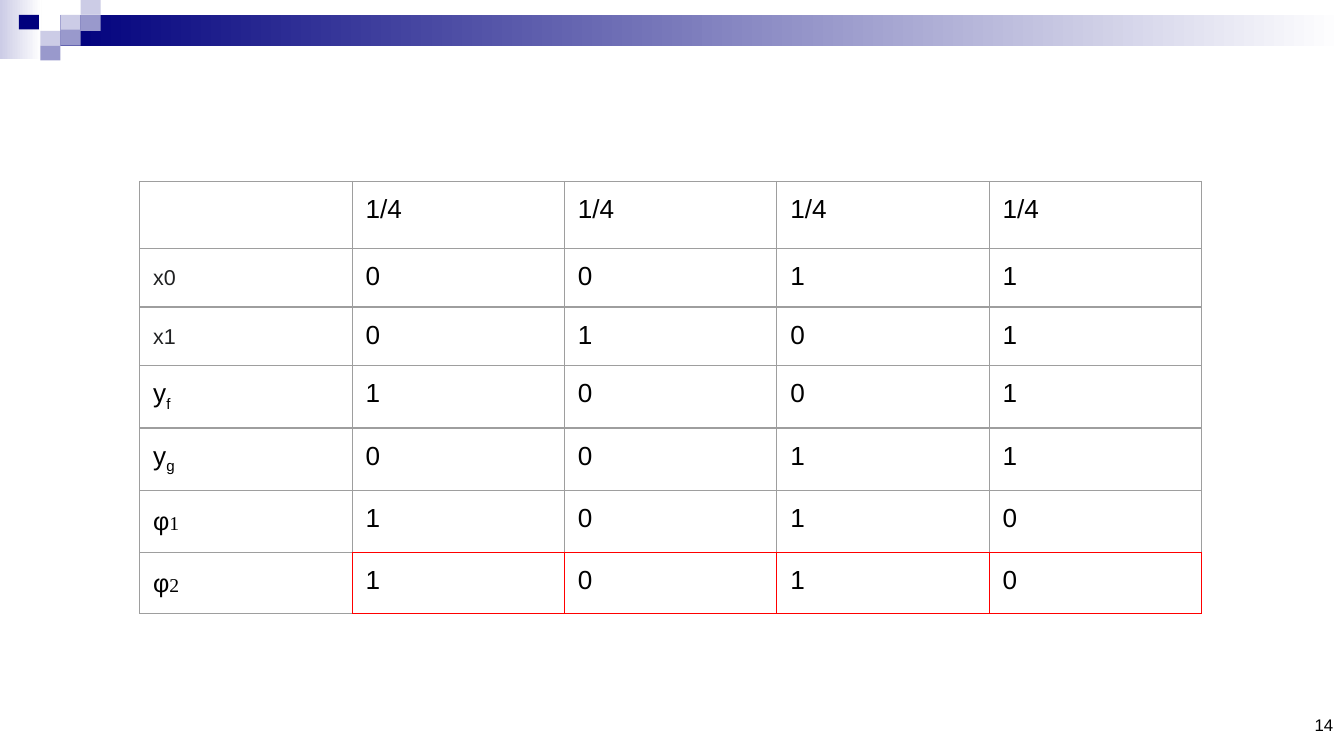
from lxml import etree
from pptx import Presentation
from pptx import util as u
from pptx.dml.color import RGBColor
from pptx.enum import shapes, text
from pptx.oxml.ns import qn

GREY, RED, BLACK = "9E9E9E", "FF0000", "000000"
NAVY, PALE, MID, WHITE = "00007D", "CCCCE6", "9999CC", "FFFFFF"


def rgb(value):
    """Return the colour for a hex string."""
    return RGBColor.from_string(value)


def add_run(p, txt, size=14, font="Arial", color=BLACK, base=0):
    """Add one formatted run, with an optional baseline shift in percent."""
    r = p.add_run()
    r.text = txt
    r.font.size = u.Pt(size)
    r.font.name = font
    r.font.color.rgb = rgb(color)
    if base:
        r.font._element.set("baseline", str(base * 1000))


def add_block(s, x, y, w, h, *colors):
    """Add a borderless rectangle in one colour or a left-to-right gradient."""
    sp = s.shapes.add_shape(shapes.MSO_SHAPE.RECTANGLE, *map(u.Inches, (x, y, w, h)))
    sp.shadow.inherit = False
    sp.line.fill.background()
    if len(colors) == 1:
        sp.fill.solid()
        sp.fill.fore_color.rgb = rgb(colors[0])
    else:
        sp.fill.gradient()
        sp.fill.gradient_angle = 0
        for stop, color in zip(sp.fill.gradient_stops, colors):
            stop.color.rgb = rgb(color)


def add_banner(s, x, y, w):
    """Draw the gradient band and its mosaic of small squares."""
    add_block(s, x, y, 0.31, 0.44, PALE, WHITE)
    add_block(s, x + 0.45, y + 0.11, w - 0.45, 0.23, NAVY, WHITE)
    squares = [(0.45, 0.11, 0.12, PALE), (0.6, 0, 0.11, PALE),
               (0.6, 0.11, 0.12, MID), (0.3, 0.23, 0.11, PALE),
               (0.14, 0.11, 0.11, NAVY), (0.45, 0.22, 0.12, MID),
               (0.3, 0.34, 0.11, MID)]
    for dx, dy, h, color in squares:
        add_block(s, x + dx, y + dy, 0.15, h, color)


def set_borders(cell, **sides):
    """Set the cell's edges, given as L, R, T and B hex colours."""
    tcPr = cell._tc.get_or_add_tcPr()
    for side in "LRTB":
        ln = etree.SubElement(tcPr, qn(f"a:ln{side}"), w=str(u.Pt(0.75)))
        fill = etree.SubElement(ln, qn("a:solidFill"))
        etree.SubElement(fill, qn("a:srgbClr"), val=sides[side])


def add_label(p, name):
    """Write a row label: input, subscripted output or Greek function."""
    head, tail = name[0], name[1:]
    if head == "x":
        add_run(p, name, 11.5, color="202122")
        add_run(p, " ")
    elif head == "y":
        add_run(p, head)
        add_run(p, tail, base=-25)
    else:
        p.line_spacing = 1.15
        add_run(p, head, 13.5)
        add_run(p, tail, 10.5, "Times New Roman")


def add_truth_table(s, x, y, size, col_width, row_height):
    """Draw the truth table with its last row of values outlined in red."""
    rows = [("", ["1/4"] * 4), ("x0", "0011"), ("x1", "0101"), ("yf", "1001"),
            ("yg", "0011"), ("φ1", "1010"), ("φ2", "1010")]
    frame = s.shapes.add_table(len(rows), 5, *map(u.Inches, (x, y, size, size)))
    tbl = frame.table
    tbl.first_row = tbl.horz_banding = False
    for col in tbl.columns:
        col.width = u.Inches(col_width)
    for row in tbl.rows:
        row.height = u.Inches(row_height)
    frame.width = frame.height = u.Inches(size)
    last = len(rows) - 1
    for i, (name, values) in enumerate(rows):
        for j, value in enumerate([name, *values]):
            cell = tbl.cell(i, j)
            cell.margin_left = cell.margin_right = u.Inches(0.1)
            cell.margin_top = cell.margin_bottom = u.Inches(0.1)
            edge = RED if i == last and j else GREY
            set_borders(cell, L=edge, T=edge, R=RED if i == last else GREY,
                        B=RED if i >= last - 1 and j else GREY)
            cell.fill.background()
            p = cell.text_frame.paragraphs[0]
            if j:
                add_run(p, value)
            elif name:
                add_label(p, name)


def add_page_number(s, x, y, w, h, number):
    """Write the page number at the right end of its box."""
    tf = s.shapes.add_textbox(*map(u.Inches, (x, y, w, h))).text_frame
    tf.word_wrap = True
    tf.vertical_anchor = text.MSO_ANCHOR.BOTTOM
    tf.margin_left = tf.margin_right = u.Inches(0.08)
    tf.margin_top = tf.margin_bottom = u.Inches(0.04)
    p = tf.paragraphs[0]
    p.alignment = text.PP_ALIGN.RIGHT
    add_run(p, number, 9)


def main():
    """Build and save the slide."""
    prs = Presentation()
    prs.slide_width = u.Inches(10)
    prs.slide_height = prs.slide_width * 9 // 16
    s = prs.slides.add_slide(prs.slide_layouts[6])
    add_banner(s, 0, 0, 10)
    add_page_number(s, 7.67, 5.31, 2.33, 0.2, "14")
    add_truth_table(s, 1.04, 1.35, 3.28, 1.58, 0.42)
    prs.save("out.pptx")


if __name__ == "__main__":
    main()
